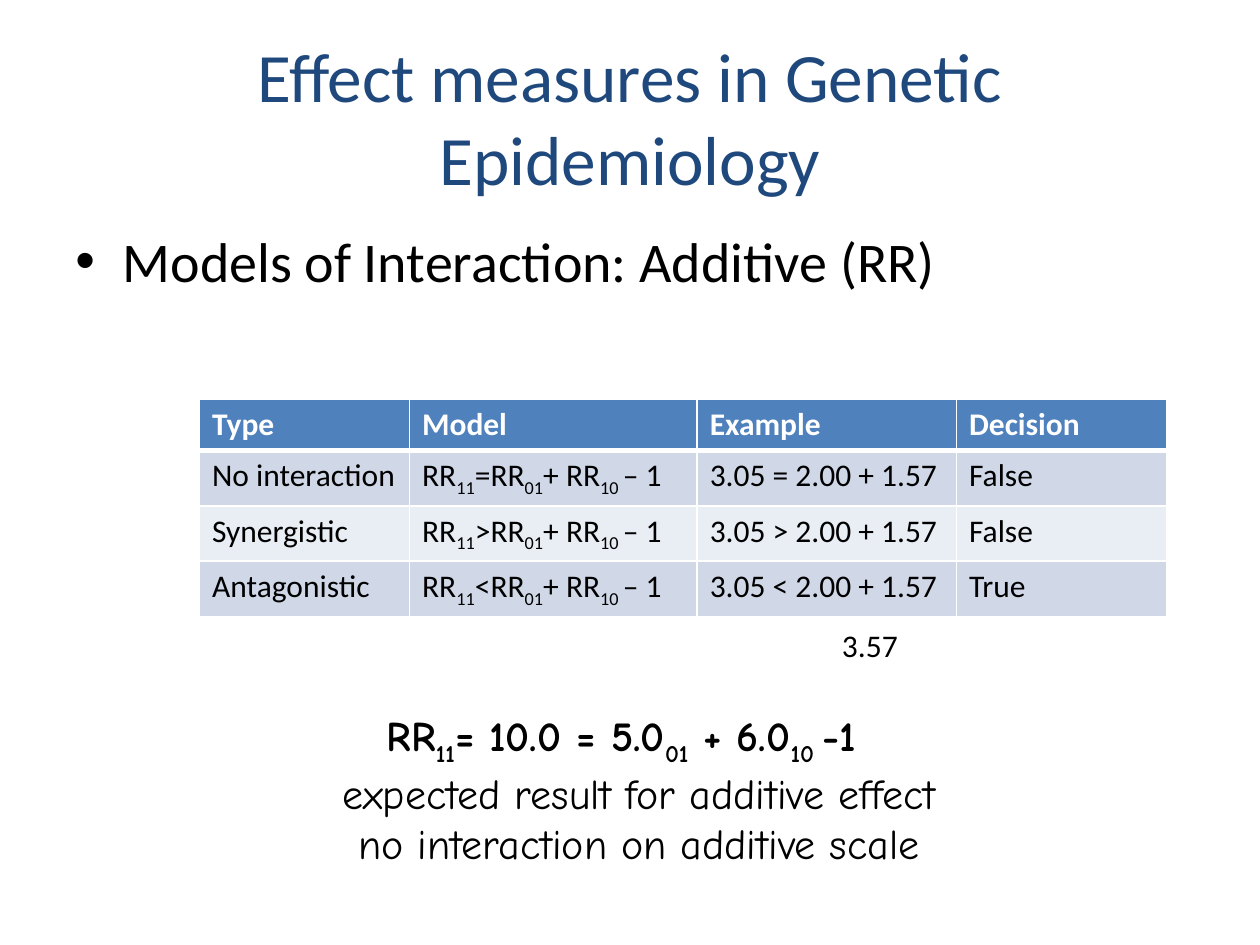
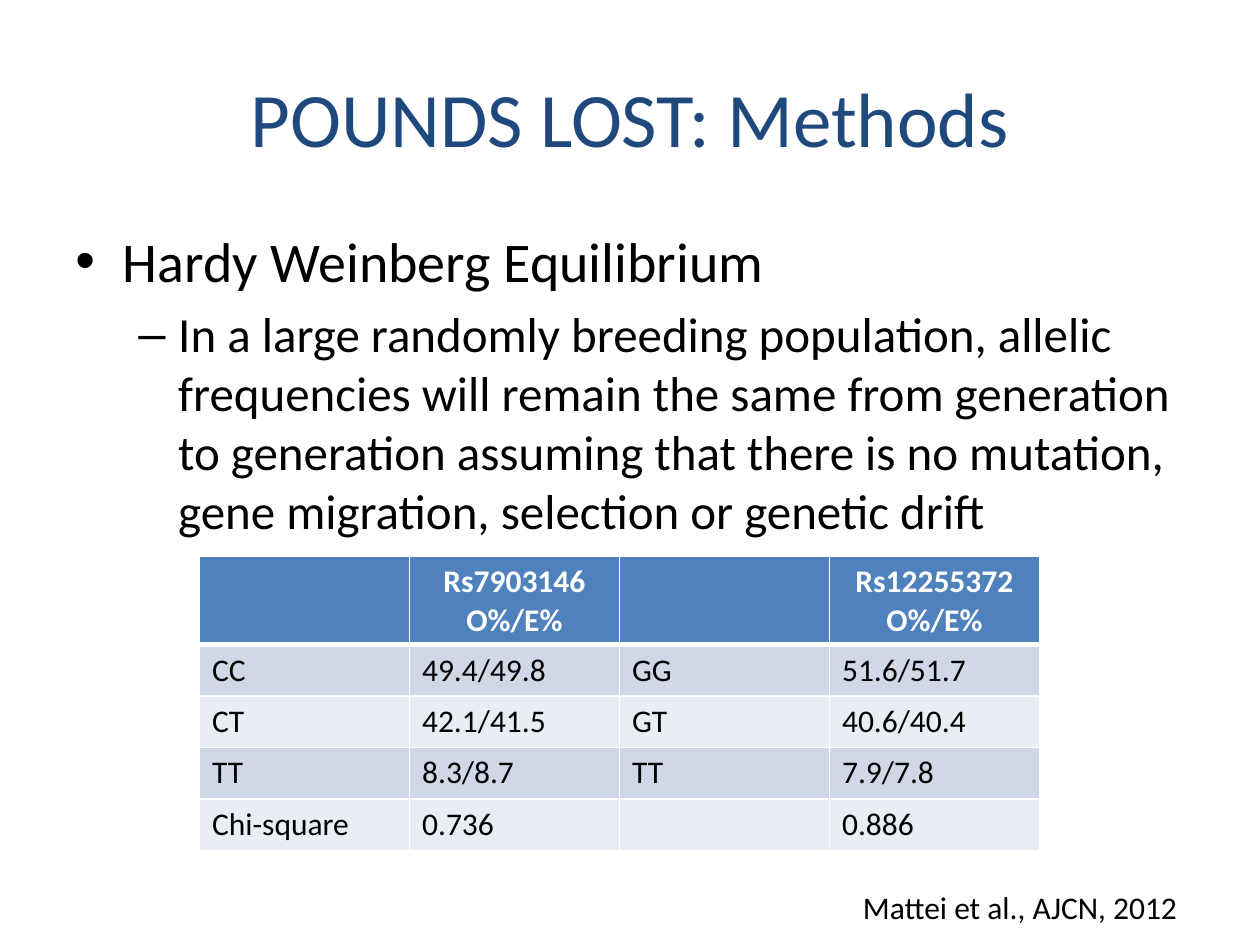
from dataclasses import dataclass

from lxml.etree import SubElement
from pptx import Presentation
from pptx.dml.color import RGBColor
from pptx.enum.text import MSO_ANCHOR, MSO_AUTO_SIZE, PP_ALIGN
from pptx.oxml.ns import qn
from pptx.slide import Slide
from pptx.table import _Cell
from pptx.text.text import TextFrame
from pptx.util import Emu, Pt

EMU_PER_PX = 7620
BLACK, WHITE, NAVY = "000000", "FFFFFF", "1F497D"
HEADER_FILL, BANDS = "4F81BD", ("D0D8E8", "E9EDF4")
ROW_H = 49
BORDERS = ("a:lnL", "a:lnR", "a:lnT", "a:lnB")


@dataclass(frozen=True)
class Line:
    text: str
    size: float = 18
    color: str = BLACK
    bold: bool = False
    font: str = "Calibri"
    align: PP_ALIGN = PP_ALIGN.LEFT
    level: int = -1


@dataclass(frozen=True)
class Bullet:
    char: str
    margin: int
    hang: int


@dataclass(frozen=True)
class Box:
    x: int
    y: int
    w: int
    h: int


@dataclass(frozen=True)
class Grid:
    x: int
    y: int
    cols: list[int]
    header_h: int
    header_align: PP_ALIGN
    rows: list[list[str]]


BULLETS = (Bullet("•", 45, 45), Bullet("–", 98, 38))
TITLE_BOX = Box(60, 36, 1080, 150)


def px(n: int) -> Emu:
    return Emu(n * EMU_PER_PX)


def rgb(value: str) -> RGBColor:
    return RGBColor.from_string(value)


def add_bullet(p, line: Line) -> None:
    bullet = BULLETS[line.level]
    p.space_before = Pt(line.size * 0.2)
    p.level = line.level
    pPr = p._p.get_or_add_pPr()
    pPr.set("marL", str(px(bullet.margin)))
    pPr.set("indent", str(-px(bullet.hang)))
    SubElement(pPr, qn("a:buFont")).set("typeface", "Arial")
    SubElement(pPr, qn("a:buChar")).set("char", bullet.char)


def write(tf: TextFrame, lines: list[Line]) -> None:
    for i, line in enumerate(lines):
        p = tf.add_paragraph() if i else tf.paragraphs[0]
        p.alignment = line.align
        if line.level >= 0:
            add_bullet(p, line)
        fmt = {"name": line.font, "size": Pt(line.size), "bold": line.bold}
        for j, part in enumerate(line.text.split("_")):
            if not part:
                continue
            r = p.add_run()
            r.text = part
            for key, value in fmt.items():
                setattr(r.font, key, value)
            r.font.color.rgb = rgb(line.color)
            if j % 2:
                r._r.get_or_add_rPr().set("baseline", "-25000")


def add_text(s: Slide, box: Box, lines: list[Line], wrap: bool = False,
             anchor: MSO_ANCHOR = MSO_ANCHOR.TOP) -> None:
    sp = s.shapes.add_textbox(px(box.x), px(box.y), px(box.w), px(box.h))
    tf = sp.text_frame
    fmt = {
        "word_wrap": wrap,
        "vertical_anchor": anchor,
        "auto_size": MSO_AUTO_SIZE.NONE if wrap else MSO_AUTO_SIZE.SHAPE_TO_FIT_TEXT,
    }
    for key, value in fmt.items():
        setattr(tf, key, value)
    write(tf, lines)


def add_borders(cell: _Cell, row: int) -> None:
    tcPr = cell._tc.get_or_add_tcPr()
    for i, tag in enumerate(BORDERS):
        thick = (row == 0 and tag == "a:lnB") or (row == 1 and tag == "a:lnT")
        ln = tcPr.makeelement(qn(tag), {"w": str(Pt(3 if thick else 1))})
        SubElement(SubElement(ln, qn("a:solidFill")), qn("a:srgbClr")).set("val", WHITE)
        tcPr.insert(i, ln)


def add_grid(s: Slide, grid: Grid) -> None:
    heights = [grid.header_h] + [ROW_H] * (len(grid.rows) - 1)
    table = s.shapes.add_table(len(heights), len(grid.cols), px(grid.x), px(grid.y),
                               px(sum(grid.cols)), px(sum(heights))).table
    for col, width in zip(table.columns, grid.cols):
        col.width = px(width)
    for i, (row, height) in enumerate(zip(grid.rows, heights)):
        table.rows[i].height = px(height)
        header = i == 0
        color = WHITE if header else BLACK
        align = grid.header_align if header else PP_ALIGN.LEFT
        for j, text in enumerate(row):
            cell = table.cell(i, j)
            cell.fill.solid()
            cell.fill.fore_color.rgb = rgb(HEADER_FILL if header else BANDS[(i - 1) % 2])
            add_borders(cell, i)
            write(cell.text_frame, [Line(t, color=color, bold=header, align=align)
                                    for t in text.split("\n")])


def add_slide(prs, title: str, title_size: float, body_h: int, body: list[Line]) -> Slide:
    s = prs.slides.add_slide(prs.slide_layouts[6])
    add_text(s, TITLE_BOX, [Line(title, title_size, NAVY, align=PP_ALIGN.CENTER)],
             wrap=True, anchor=MSO_ANCHOR.MIDDLE)
    add_text(s, Box(60, 210, 1080, body_h), body, wrap=True)
    return s


def interaction_row(kind: str, sign: str, decision: str) -> list[str]:
    return [kind, f"RR_11_{sign}RR_01_+ RR_10 _– 1", f"3.05 {sign} 2.00 + 1.57", decision]


def build_effect_measures(prs) -> None:
    s = add_slide(prs, "Effect measures in Genetic Epidemiology", 39.6, 90,
                  [Line("Models of Interaction: Additive (RR)", 32, level=0)])
    add_grid(s, Grid(190, 380, [200, 274, 247, 200], ROW_H, PP_ALIGN.LEFT, [
        ["Type", "Model", "Example", "Decision"],
        interaction_row("No interaction", "=", "False"),
        interaction_row("Synergistic", ">", "False"),
        interaction_row("Antagonistic", "<", "True"),
    ]))
    add_text(s, Box(790, 590, 78, 48), [Line("3.57")])
    formula = "RR_11_= 10.0 = 5.0_01_ + 6.0_10 _-1\t"
    notes = [formula, "expected result for additive effect", "no interaction on additive scale"]
    add_text(s, Box(260, 670, 697, 157),
             [Line(t, 24, bold=t == formula, font="Comic Neue", align=PP_ALIGN.CENTER)
              for t in notes])


def build_methods(prs) -> None:
    s = add_slide(prs, "POUNDS LOST: Methods", 44, 594, [
        Line("Hardy Weinberg Equilibrium", 32, level=0),
        Line("In a large randomly breeding population, allelic frequencies will remain "
             "the same from generation to generation assuming that there is no mutation, "
             "gene migration, selection or genetic drift", 28, level=1),
    ])
    add_text(s, Box(810, 840, 328, 48), [Line("Mattei et al., AJCN, 2012")])
    add_grid(s, Grid(190, 530, [200] * 4, 83, PP_ALIGN.CENTER, [
        ["", "Rs7903146\nO%/E%", "", "Rs12255372\nO%/E%"],
        ["CC", "49.4/49.8", "GG", "51.6/51.7"],
        ["CT", "42.1/41.5", "GT", "40.6/40.4"],
        ["TT", "8.3/8.7", "TT", "7.9/7.8"],
        ["Chi-square", "0.736", "", "0.886"],
    ]))


def main() -> None:
    prs = Presentation()
    prs.slide_width, prs.slide_height = px(1200), px(900)
    build_effect_measures(prs)
    build_methods(prs)
    prs.save("out.pptx")


if __name__ == "__main__":
    main()
